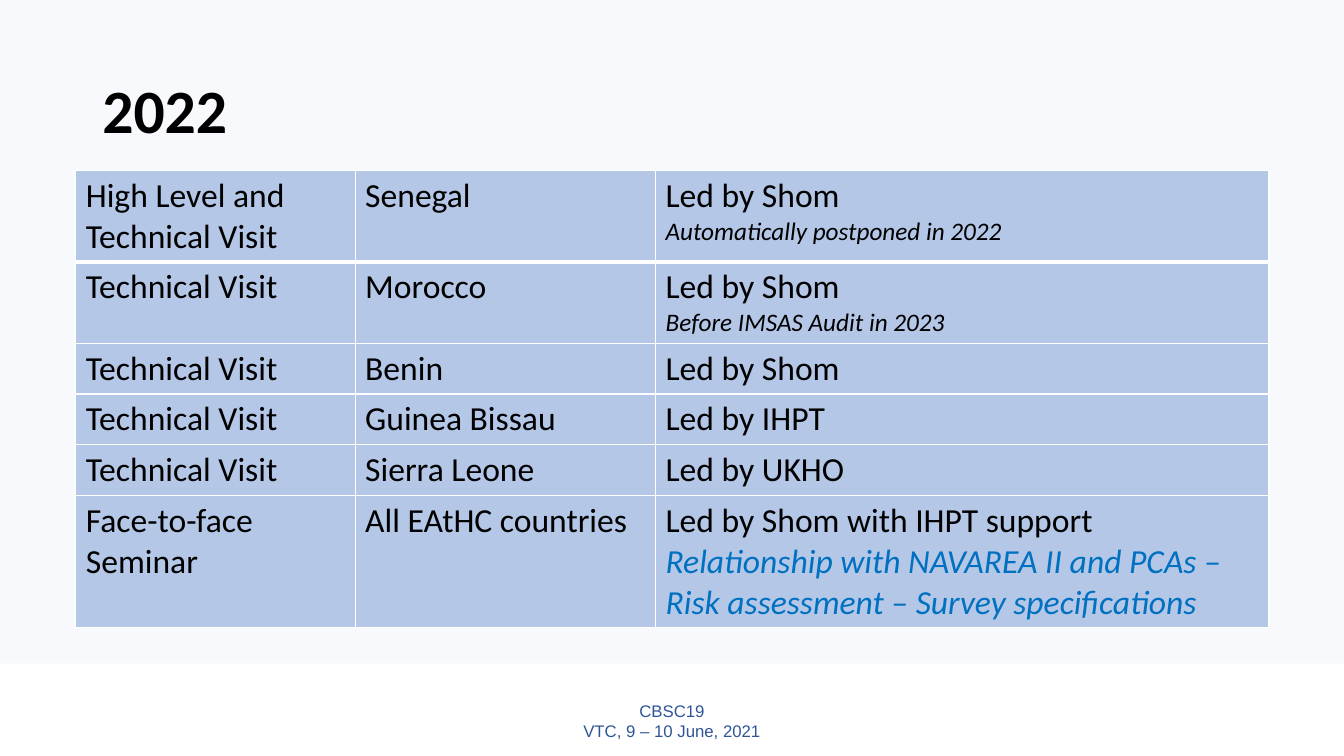
from dataclasses import dataclass

from lxml.etree import SubElement
from pptx import Presentation
from pptx.dml.color import RGBColor
from pptx.enum.shapes import MSO_SHAPE
from pptx.enum.text import MSO_ANCHOR, PP_ALIGN
from pptx.oxml.ns import qn
from pptx.util import Cm, Pt


@dataclass(frozen=True)
class Theme:
    heading_font: str = "Calibri"
    footer_font: str = "Arial"
    ink: str = "000000"
    accent: str = "0070C0"
    footer_ink: str = "2F5597"
    panel: str = "DAE3F3"
    panel_opacity: int = 21
    cell: str = "B4C7E7"
    border: str = "FFFFFF"
    title_size: int = 44
    body_size: int = 24
    note_size: int = 18
    footer_size: int = 12
    thin_line: int = 1
    thick_line: int = 3


THEME = Theme()


@dataclass(frozen=True)
class Style:
    size: int
    color: str = THEME.ink
    font: str = THEME.heading_font
    bold: bool = False
    italic: bool = False


TITLE = Style(THEME.title_size, bold=True)
BODY = Style(THEME.body_size)
NOTE = Style(THEME.note_size, italic=True)
TOPIC = Style(THEME.body_size, THEME.accent, italic=True)
FOOTER = Style(THEME.footer_size, THEME.footer_ink, THEME.footer_font)


@dataclass(frozen=True)
class Box:
    left: float
    top: float
    width: float
    height: float

    def lengths(self) -> tuple:
        return Cm(self.left), Cm(self.top), Cm(self.width), Cm(self.height)


@dataclass(frozen=True)
class Activity:
    kind: str
    place: str
    lead: str
    height: float
    remark: str = ""
    remark_style: Style = NOTE


SLIDE_WIDTH, SLIDE_HEIGHT = 33.87, 19.05
COLUMN_WIDTHS = (7.04, 7.57, 15.46)
ACTIVITIES = (
    Activity("High Level and Technical Visit", "Senegal", "Led by Shom", 2.3,
             "Automatically postponed in 2022"),
    Activity("Technical Visit", "Morocco", "Led by Shom", 2.05,
             "Before IMSAS Audit in 2023"),
    Activity("Technical Visit", "Benin", "Led by Shom", 1.28),
    Activity("Technical Visit", "Guinea Bissau", "Led by IHPT", 1.28),
    Activity("Technical Visit", "Sierra Leone", "Led by UKHO", 1.28),
    Activity("Face-to-face Seminar", "All EAtHC countries",
             "Led by Shom with IHPT support", 3.32,
             "Relationship with NAVAREA II and PCAs – Risk assessment – Survey specifications",
             TOPIC),
)


def format_paragraph(paragraph, style: Style) -> None:
    for run in paragraph.runs:
        font = run.font
        font.name, font.size = style.font, Pt(style.size)
        font.bold, font.italic = style.bold, style.italic
        font.color.rgb = RGBColor.from_string(style.color)


def add_label(slide, box: Box, text: str, style: Style,
              align: PP_ALIGN, line_spacing: float = 1.0) -> None:
    frame = slide.shapes.add_textbox(*box.lengths()).text_frame
    frame.word_wrap = True
    frame.vertical_anchor = MSO_ANCHOR.MIDDLE
    frame.text = text
    paragraph = frame.paragraphs[0]
    paragraph.alignment = align
    paragraph.line_spacing = line_spacing
    format_paragraph(paragraph, style)


def add_panel(slide, box: Box) -> None:
    panel = slide.shapes.add_shape(MSO_SHAPE.RECTANGLE, *box.lengths())
    panel.shadow.inherit = False
    panel.line.fill.background()
    panel.fill.solid()
    panel.fill.fore_color.rgb = RGBColor.from_string(THEME.panel)
    color = panel.fill._xPr.find(qn("a:solidFill"))[0]
    SubElement(color, qn("a:alpha"), val=str(THEME.panel_opacity * 1000))


def set_borders(cell, top: int, bottom: int) -> None:
    properties = cell._tc.get_or_add_tcPr()
    widths = {"L": THEME.thin_line, "R": THEME.thin_line, "T": top, "B": bottom}
    for side, width in widths.items():
        line = SubElement(properties, qn(f"a:ln{side}"), w=str(Pt(width)))
        fill = SubElement(line, qn("a:solidFill"))
        SubElement(fill, qn("a:srgbClr"), val=THEME.border)


def fill_cell(cell, text: str, remark: str, remark_style: Style) -> None:
    cell.fill.solid()
    cell.fill.fore_color.rgb = RGBColor.from_string(THEME.cell)
    frame = cell.text_frame
    frame.text = text
    format_paragraph(frame.paragraphs[0], BODY)
    if remark:
        paragraph = frame.add_paragraph()
        paragraph.text = remark
        format_paragraph(paragraph, remark_style)


def add_programme(slide, left: float, top: float) -> None:
    box = Box(left, top, sum(COLUMN_WIDTHS), sum(a.height for a in ACTIVITIES))
    table = slide.shapes.add_table(
        len(ACTIVITIES), len(COLUMN_WIDTHS), *box.lengths()).table
    table.first_row = table.horz_banding = False
    for column, width in zip(table.columns, COLUMN_WIDTHS):
        column.width = Cm(width)
    for index, activity in enumerate(ACTIVITIES):
        table.rows[index].height = Cm(activity.height)
        # A thick rule separates the first row from the rest
        top_line = THEME.thick_line if index == 1 else THEME.thin_line
        bottom_line = THEME.thick_line if index == 0 else THEME.thin_line
        entries = ((activity.kind, ""), (activity.place, ""),
                   (activity.lead, activity.remark))
        for cell, (text, remark) in zip(table.rows[index].cells, entries):
            set_borders(cell, top_line, bottom_line)
            fill_cell(cell, text, remark, activity.remark_style)


def main() -> None:
    presentation = Presentation()
    presentation.slide_width = Cm(SLIDE_WIDTH)
    presentation.slide_height = Cm(SLIDE_HEIGHT)
    slide = presentation.slides.add_slide(presentation.slide_layouts[6])

    # Footer and tinted backdrop
    add_label(slide, Box(11.22, 17.65, 11.43, 1.01),
              "CBSC19\vVTC, 9 – 10 June, 2021", FOOTER, PP_ALIGN.CENTER)
    add_panel(slide, Box(0, 0, SLIDE_WIDTH, 16.72))

    # Year and its programme of visits
    add_label(slide, Box(2.33, 1.01, 29.21, 3.68), "2022", TITLE,
              PP_ALIGN.LEFT, line_spacing=0.9)
    add_programme(slide, left=1.91, top=4.3)

    presentation.save("out.pptx")


if __name__ == "__main__":
    main()
